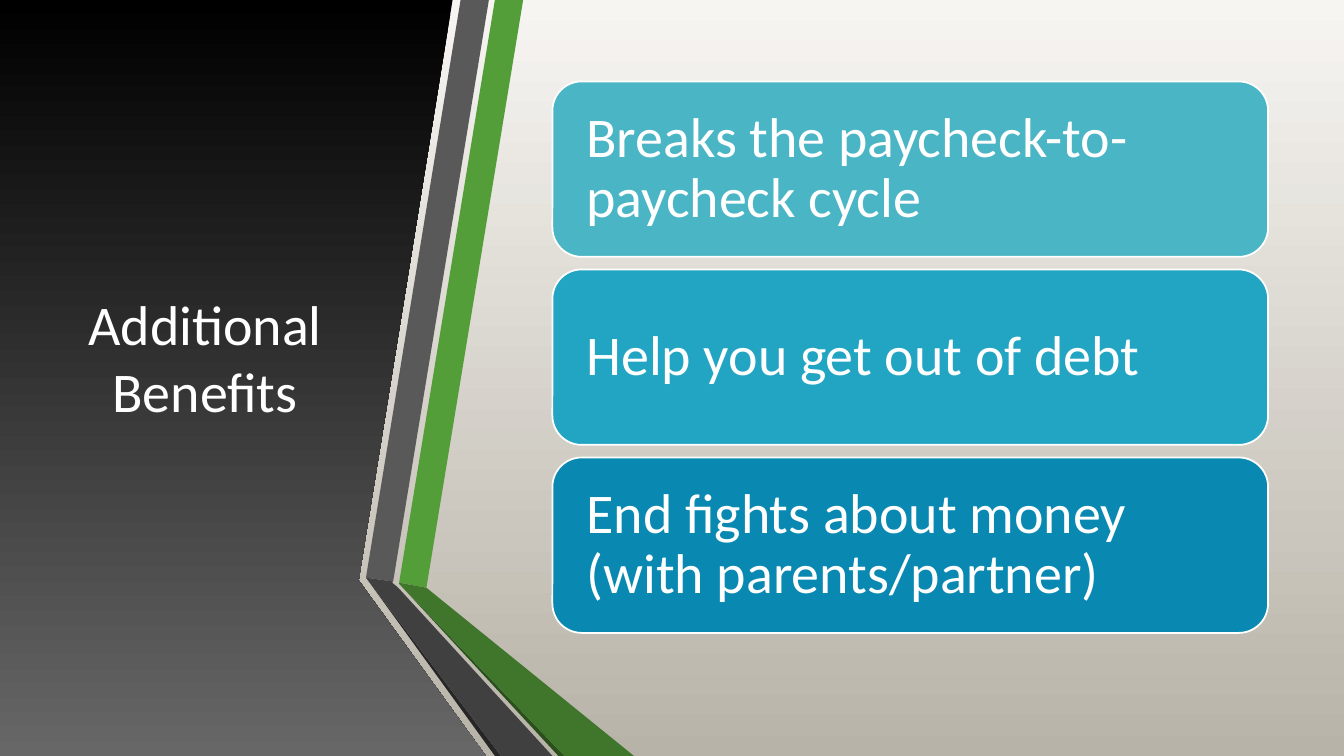
"""Build the Additional Benefits slide: ribbon frame, title and three cards."""
import pptx
import pptx.dml.color
import pptx.enum.shapes
import pptx.enum.text
import pptx.util

Pt = pptx.util.Pt
RGB = pptx.dml.color.RGBColor
ALIGN = pptx.enum.text.PP_ALIGN
MID = pptx.enum.text.MSO_ANCHOR.MIDDLE

WHITE = RGB(0xFF, 0xFF, 0xFF)
BLACK = RGB(0x00, 0x00, 0x00)
ASH = RGB(0x67, 0x67, 0x67)
CREAM = RGB(0xF7, 0xF5, 0xF2)
STONE = RGB(0xB8, 0xB3, 0xA8)
GREEN = RGB(0x54, 0x9E, 0x39)
MOSS = RGB(0x3F, 0x76, 0x2B)
PINE = RGB(0x2A, 0x4F, 0x1C)
GREY = RGB(0x59, 0x59, 0x59)
SLATE = RGB(0x40, 0x40, 0x40)
COAL = RGB(0x26, 0x26, 0x26)
AQUA = RGB(0x4A, 0xB5, 0xC4)
TEAL = RGB(0x22, 0xA5, 0xC2)
BLUE = RGB(0x09, 0x89, 0xB1)

WIDE, HIGH = 960, 540
PANEL = [(0, 0), (323.3, 0), (256.3, 414), (256.3, 414.7), (347, HIGH), (0, HIGH)]
BANDS = [
    (GREEN, [(285.1, 416.2), (304.6, 419.8), (373.7, 0), (353.5, 0)]),
    (GREY, [(349.2, 0), (329, 0), (261.4, 412.6), (280.8, 415.4)]),
    (COAL, [(261.4, 412.6), (353.5, HIGH), (357.8, HIGH)]),
    (PINE, [(285.1, 416.9), (398.9, HIGH), (403.2, HIGH)]),
    (MOSS, [(285.1, 416.9), (403.2, HIGH), (452.9, HIGH), (304.6, 419.8),
            (285.1, 416.2)]),
    (SLATE, [(394.6, HIGH), (284.4, 419.8), (280.1, 416.2), (280.8, 415.4),
             (261.4, 412.6), (357.8, HIGH)]),
]
CARDS = [
    (AQUA, "Breaks the paycheck-to-paycheck cycle"),
    (TEAL, "Help you get out of debt"),
    (BLUE, "End fights about money (with parents/partner)"),
]


def write(shape, text, font="Calibri", size=40, color=WHITE,
          align=ALIGN.LEFT, space=1.0, inset=7.2):
    frame = shape.text_frame
    frame.text = text
    frame.word_wrap = True
    frame.auto_size = pptx.enum.text.MSO_AUTO_SIZE.NONE
    frame.vertical_anchor = MID
    frame.margin_left = frame.margin_right = Pt(inset)
    para = frame.paragraphs[0]
    para.alignment = align
    para.line_spacing = space
    face = para.runs[0].font
    face.name, face.size = font, Pt(size)
    face.color.rgb = color


def fade(fill, top, base):
    fill.gradient()
    fill.gradient_angle = 270
    for stop, color in zip(fill.gradient_stops, (top, base)):
        stop.color.rgb = color


class Deck:
    def __init__(self):
        self.show = pptx.Presentation()
        self.show.slide_width, self.show.slide_height = Pt(WIDE), Pt(HIGH)
        self.slide = self.show.slides.add_slide(self.show.slide_layouts[5])
        self.shapes = self.slide.shapes
        fade(self.slide.background.fill, CREAM, STONE)

    def outline(self, points):
        spots = [(Pt(x), Pt(y)) for x, y in points]
        pen = self.shapes.build_freeform(*spots[0], scale=1.0)
        pen.add_line_segments(spots[1:], close=True)
        shape = pen.convert_to_shape()
        shape.shadow.inherit = False
        shape.line.fill.background()
        return shape

    def panel(self, points, top, base):
        fade(self.outline(points).fill, top, base)

    def band(self, color, points):
        fill = self.outline(points).fill
        fill.solid()
        fill.fore_color.rgb = color

    def title(self, text, left, top, width, height):
        shape = self.shapes.title
        shape.left, shape.top = Pt(left), Pt(top)
        shape.width, shape.height = Pt(width), Pt(height)
        write(shape, text, align=ALIGN.CENTER)
        self.shapes._spTree.append(shape._element)

    def card(self, color, text, left, top, width, height):
        shape = self.shapes.add_shape(
            pptx.enum.shapes.MSO_SHAPE.ROUNDED_RECTANGLE,
            Pt(left), Pt(top), Pt(width), Pt(height))
        shape.shadow.inherit = False
        shape.fill.solid()
        shape.fill.fore_color.rgb = color
        shape.line.color.rgb = WHITE
        shape.line.width = Pt(1.25)
        write(shape, text, space=0.9, inset=18.2)


def main():
    deck = Deck()
    deck.panel(PANEL, BLACK, ASH)
    deck.title("Additional Benefits", 42.5, 54, 208, 401.8)
    for color, points in BANDS:
        deck.band(color, points)
    for row, (color, text) in enumerate(CARDS):
        deck.card(color, text, 394.6, 58.2 + row * 134.3, 511.2, 125.3)
    deck.show.save("out.pptx")


if __name__ == "__main__":
    main()
